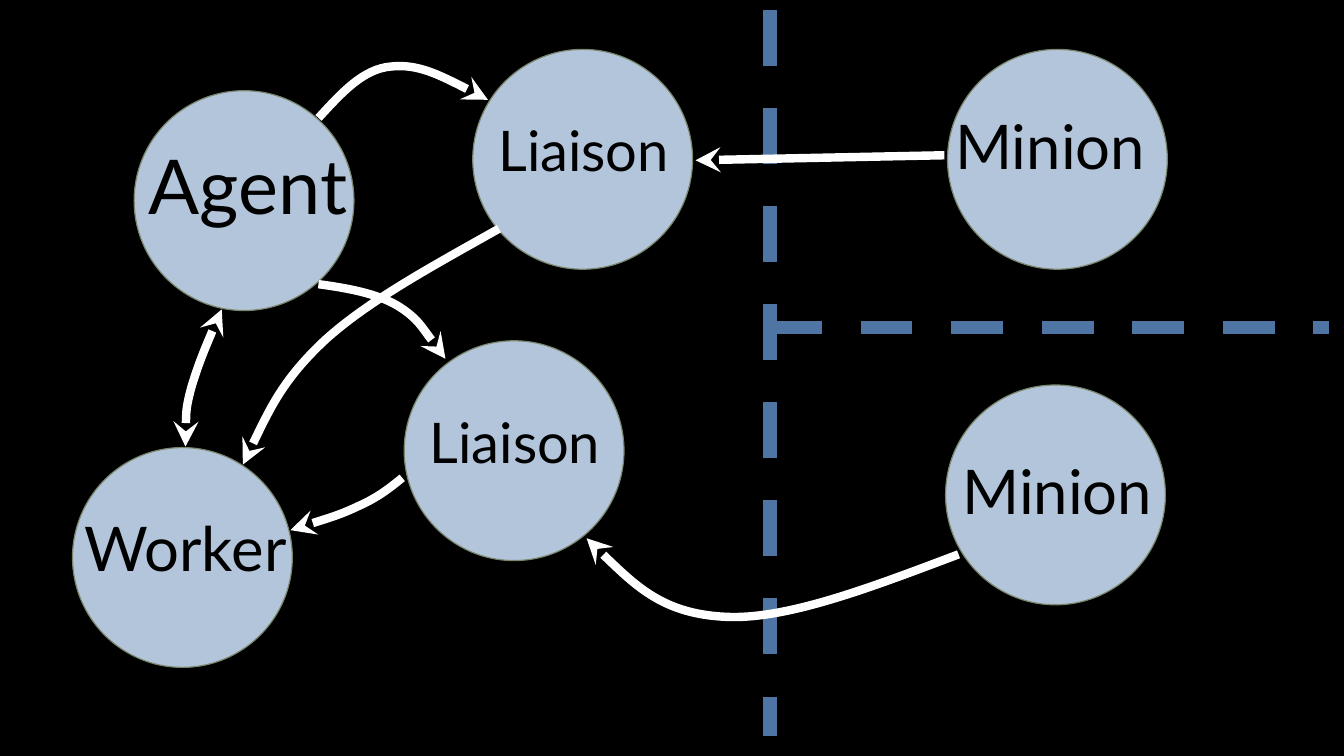
from dataclasses import dataclass

from lxml import etree
from pptx import Presentation
from pptx import util as u
from pptx.dml.color import RGBColor
from pptx.enum import dml, shapes, text
from pptx.oxml import ns

Point = tuple[float, float]

COLOURS = {
    "background": "000000",
    "circle": "B3C5DA",
    "outline": "7A866C",
    "label": "000000",
    "divider": "4E75A3",
    "arrow": "FFFFFF",
}
FONT = "Lato"
DIAMETER = 157
LABEL_WIDTH = 223.2
ARROW_WIDTH = 6


@dataclass
class Node:
    name: str
    size: float
    circle: Point  # top left of the circle
    label: Point  # top left of the label


@dataclass
class Divider:
    start: Point
    end: Point
    width: float


@dataclass
class Curve:
    points: list[Point]  # start, then two controls and an end per segment
    both_ends: bool = False


DIVIDERS = [
    Divider((550.1, 7.2), (550.1, 525.6), 10),
    Divider((550.1, 234), (949, 234), 9.25),
]

NODES = [
    Node("Agent", 54, (95.8, 64.8), (65.5, 95.8)),
    Node("Liaison", 40, (288.7, 243.4), (256.3, 287.3)),
    Node("Worker", 44, (51.8, 319.7), (20.9, 360.7)),
    Node("Minion", 44, (675.4, 275), (643.7, 319.7)),
    Node("Liaison", 40, (337.7, 35.3), (305.3, 79.2)),
    Node("Minion", 44, (676.8, 35.3), (638.6, 73.4)),
]

CURVES = [
    # Agent and Worker
    Curve([(158.4, 221), (149.8, 240.5), (141.8, 259.9), (136.8, 276.5),
           (132.5, 292.3), (132.5, 306), (132.5, 319)], both_ends=True),
    # Agent to lower Liaison
    Curve([(227.5, 203), (248.4, 205.9), (268.6, 209.5), (283.7, 218.2),
           (298.8, 227.5), (318.2, 256.3), (318.2, 256.3)]),
    # Lower Liaison to Worker
    Curve([(287.3, 341.3), (278.6, 348.5), (269.3, 355.7), (256.3, 361.4),
           (242.6, 367.9), (225.4, 373), (207.4, 378.7)]),
    # Lower Minion to lower Liaison
    Curve([(684.7, 396), (623.5, 419), (562.3, 442.8), (518.4, 440.6),
           (473.8, 438.5), (446.4, 411.8), (419, 384.5)]),
    # Upper Liaison to Worker
    Curve([(356.4, 163.4), (310.3, 189.4), (263.5, 214.6), (232.6, 242.6),
           (202.3, 270.7), (187.9, 301.7), (173.5, 331.9)]),
    # Agent to upper Liaison
    Curve([(227.5, 84.2), (243.4, 67), (259.2, 49), (279.4, 47.5),
           (298.8, 45.4), (324, 58.3), (348.5, 71.3)]),
]
MINION_TO_LIAISON = ((674.6, 110.9), (496.8, 114.5))


def colour(name: str) -> RGBColor:
    return RGBColor.from_string(COLOURS[name])


def in_points(point: Point) -> tuple[int, int]:
    return u.Pt(point[0]), u.Pt(point[1])


def style_line(shape, colour_name: str, width: float) -> None:
    shape.line.color.rgb = colour(colour_name)
    shape.line.width = u.Pt(width)


def add_arrowheads(shape, both_ends: bool = False) -> None:
    line = shape.line._get_or_add_ln()
    for tag in ["a:headEnd", "a:tailEnd"] if both_ends else ["a:tailEnd"]:
        etree.SubElement(line, ns.qn(tag), type="stealth")


def add_line(slide, start: Point, end: Point, colour_name: str, width: float):
    connector = slide.shapes.add_connector(
        shapes.MSO_CONNECTOR.STRAIGHT, *in_points(start), *in_points(end))
    style_line(connector, colour_name, width)
    etree.SubElement(connector._element.spPr, ns.qn("a:effectLst"))
    return connector


def add_node(slide, node: Node) -> None:
    circle = slide.shapes.add_shape(
        shapes.MSO_SHAPE.OVAL, *in_points(node.circle),
        u.Pt(DIAMETER), u.Pt(DIAMETER))
    circle.shadow.inherit = False
    circle.fill.solid()
    circle.fill.fore_color.rgb = colour("circle")
    style_line(circle, "outline", 0.85)

    label = slide.shapes.add_textbox(
        *in_points(node.label), u.Pt(LABEL_WIDTH), u.Pt(1.2 * node.size + 7.2))
    frame = label.text_frame
    frame.word_wrap = True
    frame.auto_size = text.MSO_AUTO_SIZE.SHAPE_TO_FIT_TEXT
    frame.vertical_anchor = text.MSO_ANCHOR.MIDDLE
    paragraph = frame.paragraphs[0]
    paragraph.text = node.name
    paragraph.alignment = text.PP_ALIGN.CENTER
    paragraph.font.name = FONT
    paragraph.font.size = u.Pt(node.size)
    paragraph.font.color.rgb = colour("label")


def add_curve(slide, curve: Curve) -> None:
    start, *rest = [in_points(point) for point in curve.points]
    builder = slide.shapes.build_freeform(*start)
    builder.add_line_segments(rest, close=False)
    shape = builder.convert_to_shape()
    shape.shadow.inherit = False
    shape.fill.background()
    style_line(shape, "arrow", ARROW_WIDTH)
    add_arrowheads(shape, curve.both_ends)

    # Turn each three straight segments into one Bezier segment
    outline = next(shape._element.iter(ns.qn("a:path")))
    segments = outline.findall(ns.qn("a:lnTo"))
    for first in range(0, len(segments), 3):
        bezier = etree.SubElement(outline, ns.qn("a:cubicBezTo"))
        for segment in segments[first:first + 3]:
            bezier.append(segment[0])
            outline.remove(segment)


def main() -> None:
    presentation = Presentation()
    presentation.slide_width = u.Pt(960)
    presentation.slide_height = u.Pt(540)
    slide = presentation.slides.add_slide(presentation.slide_layouts[6])
    slide.background.fill.solid()
    slide.background.fill.fore_color.rgb = colour("background")

    # Dashed dividers
    for divider in DIVIDERS:
        line = add_line(slide, divider.start, divider.end, "divider", divider.width)
        line.line.dash_style = dml.MSO_LINE.DASH

    # Labelled circles
    for node in NODES:
        add_node(slide, node)

    # Arrows
    for curve in CURVES:
        add_curve(slide, curve)
    add_arrowheads(add_line(slide, *MINION_TO_LIAISON, "arrow", ARROW_WIDTH))

    presentation.save("out.pptx")


if __name__ == "__main__":
    main()
